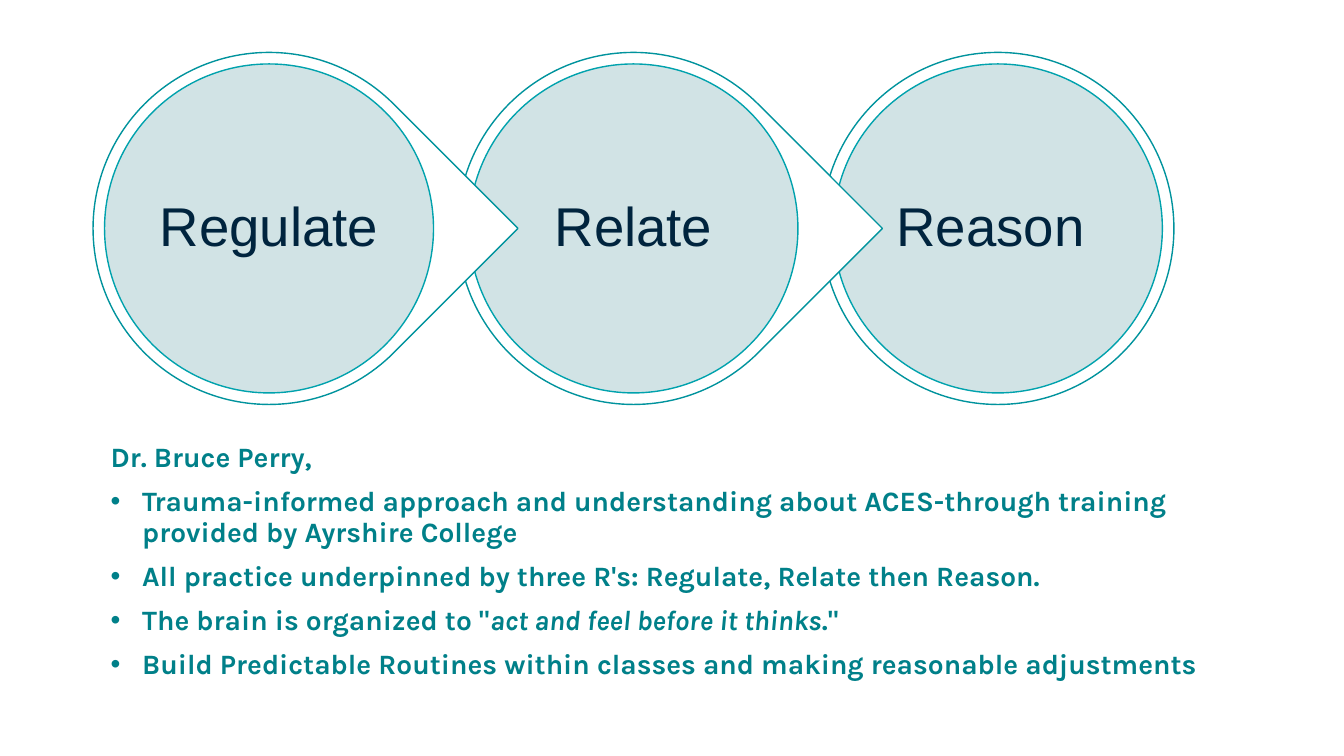
from dataclasses import dataclass

from lxml import etree
from pptx import Presentation
from pptx.dml.color import RGBColor
from pptx.enum.shapes import MSO_SHAPE
from pptx.enum.text import MSO_ANCHOR, PP_ALIGN
from pptx.oxml.ns import qn
from pptx.util import Pt

ELLIPSE = MSO_SHAPE.OVAL
TEARDROP = MSO_SHAPE.TEAR
MIDDLE = MSO_ANCHOR.MIDDLE
CENTER = PP_ALIGN.CENTER

WHITE = RGBColor(0xFF, 0xFF, 0xFF)
RING_TEAL = RGBColor(0x00, 0x93, 0x9D)
DISC_TEAL = RGBColor(0x00, 0xA2, 0xAD)
DISC_FILL = RGBColor(0xCC, 0xE0, 0xE3)
NAVY = RGBColor(0x00, 0x24, 0x3E)
TEXT_TEAL = RGBColor(0x00, 0x80, 0x89)

FIRST_CENTER = 192.2
STAGE_PITCH = 260.3
CENTER_Y = 163.2
RING_SIZE = 251.5
DISC_SIZE = 235
LABEL_SIZE = 168
BULLET_INDENT = 22.5


@dataclass(frozen=True)
class Stage:
    label: str
    outline: MSO_SHAPE
    rotation: float


@dataclass(frozen=True)
class Phrase:
    text: str
    italic: bool = False


@dataclass(frozen=True)
class Point:
    phrases: tuple[Phrase, ...]
    bulleted: bool = True


STAGES = (
    Stage("Regulate", TEARDROP, 45),
    Stage("Relate", TEARDROP, 45),
    Stage("Reason ", ELLIPSE, 0),
)

POINTS = (
    Point((Phrase("Dr. Bruce Perry,"),), bulleted=False),
    Point((Phrase("Trauma-informed approach and understanding about ACES-through "
                  "training provided by Ayrshire College"),)),
    Point((Phrase("All practice underpinned by three R's: Regulate, Relate then Reason."),)),
    Point((Phrase('The brain is organized to "'),
           Phrase("act and feel before it thinks", italic=True),
           Phrase('."'))),
    Point((Phrase("Build Predictable Routines within classes and making "
                  "reasonable adjustments"),)),
)


def square_at(center_x: float, size: float) -> tuple[Pt, Pt, Pt, Pt]:
    return Pt(center_x - size / 2), Pt(CENTER_Y - size / 2), Pt(size), Pt(size)


def draw_round(slide, outline: MSO_SHAPE, center_x: float, size: float,
               fill: RGBColor, line: RGBColor):
    round_shape = slide.shapes.add_shape(outline, *square_at(center_x, size))
    round_shape.shadow.inherit = False
    round_shape.fill.solid()
    round_shape.fill.fore_color.rgb = fill
    round_shape.line.color.rgb = line
    round_shape.line.width = Pt(1)
    return round_shape


def draw_stage(slide, stage: Stage, center_x: float) -> None:
    ring = draw_round(slide, stage.outline, center_x, RING_SIZE, WHITE, RING_TEAL)
    ring.rotation = stage.rotation

    disc = draw_round(slide, ELLIPSE, center_x, DISC_SIZE, DISC_FILL, DISC_TEAL)
    disc_color = disc.fill._xPr.find(qn("a:solidFill"))[0]
    etree.SubElement(disc_color, qn("a:alpha"), val="90000")

    label = slide.shapes.add_textbox(*square_at(center_x, LABEL_SIZE)).text_frame
    label.word_wrap = True
    label.vertical_anchor = MIDDLE
    label.margin_left = label.margin_right = Pt(3.6)
    label.margin_top = label.margin_bottom = Pt(3.6)
    label.text = stage.label
    wording = label.paragraphs[0]
    wording.alignment = CENTER
    wording.line_spacing = 0.9
    font = wording.runs[0].font
    font.name = "Arial"
    font.size = Pt(39)
    font.color.rgb = NAVY


def add_bullet(paragraph) -> None:
    properties = paragraph._p.get_or_add_pPr()
    properties.set("marL", str(Pt(BULLET_INDENT)))
    properties.set("indent", str(-Pt(BULLET_INDENT)))
    etree.SubElement(properties, qn("a:buFont"), typeface="Arial")
    etree.SubElement(properties, qn("a:buChar"), char="•")


def draw_points(slide, points: tuple[Point, ...]) -> None:
    frame = slide.shapes.add_textbox(Pt(72), Pt(313.2), Pt(832.3), Pt(190)).text_frame
    frame.word_wrap = True
    for index, point in enumerate(points):
        paragraph = frame.add_paragraph() if index else frame.paragraphs[0]
        if point.bulleted:
            add_bullet(paragraph)
        paragraph.line_spacing = 0.9
        if index:
            paragraph.space_before = Pt(10)
        for phrase in point.phrases:
            run = paragraph.add_run()
            run.text = phrase.text
            run.font.name = "Karla"
            run.font.size = Pt(20)
            run.font.bold = True
            run.font.italic = phrase.italic
            run.font.color.rgb = TEXT_TEAL


def main() -> None:
    presentation = Presentation()
    presentation.slide_width = Pt(960)
    presentation.slide_height = Pt(540)
    slide = presentation.slides.add_slide(presentation.slide_layouts[6])
    draw_points(slide, POINTS)
    for index, stage in reversed(list(enumerate(STAGES))):
        draw_stage(slide, stage, FIRST_CENTER + index * STAGE_PITCH)
    presentation.save("out.pptx")


if __name__ == "__main__":
    main()
